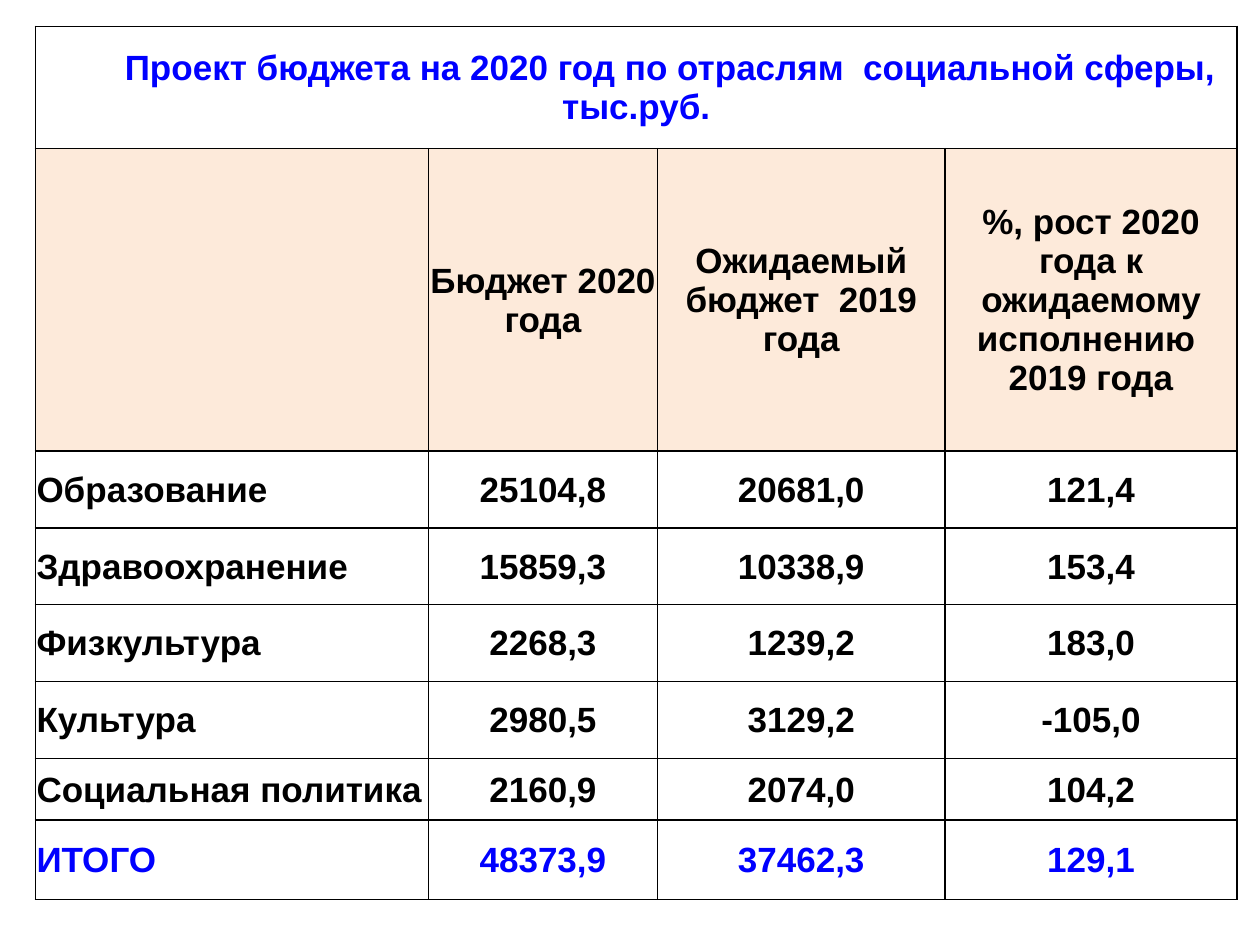
from dataclasses import dataclass

from lxml import etree
from pptx import Presentation
from pptx import util as u
from pptx.dml.color import RGBColor
from pptx.enum import text
from pptx.oxml import ns


@dataclass(frozen=True)
class Theme:
    font: str = "Arial"
    size: int = 20
    ink: str = "000000"
    accent: str = "0000FF"
    header: str = "FDEADA"
    border: str = "000000"
    border_width: int = 1
    title_indent: float = 0.54


THEME = Theme()
SLIDE_SIZE = (10, 7.5)
ORIGIN = (0.28, 0.21)
COLUMNS = [3.12, 1.82, 2.28, 2.32]
ROWS = [0.97, 2.4] + [0.61] * 4 + [0.49, 0.63]
TITLE = "Проект бюджета на 2020 год по отраслям  социальной сферы, тыс.руб."
HEADINGS = [
    "",
    "Бюджет 2020 года",
    "Ожидаемый бюджет  2019 года",
    "%, рост 2020 года к ожидаемому исполнению  2019 года",
]
SECTORS = [
    ["Образование", "25104,8", "20681,0", "121,4"],
    ["Здравоохранение", "15859,3", "10338,9", "153,4"],
    ["Физкультура", "2268,3", "1239,2", "183,0"],
    ["Культура", "2980,5", "3129,2", "-105,0"],
    ["Социальная политика", "2160,9", "2074,0", "104,2"],
]
TOTAL = ["ИТОГО", "48373,9", "37462,3", "129,1"]


def add_borders(cell):
    properties = cell._tc.get_or_add_tcPr()
    for position, side in enumerate(("lnL", "lnR", "lnT", "lnB")):
        line = etree.Element(ns.qn(f"a:{side}"), w=str(u.Pt(THEME.border_width)))
        fill = etree.SubElement(line, ns.qn("a:solidFill"))
        etree.SubElement(fill, ns.qn("a:srgbClr"), val=THEME.border)
        properties.insert(position, line)


def format_cell(cell, fill=None):
    layout = {
        "margin_left": u.Inches(0.01),
        "margin_right": u.Inches(0.01),
        "margin_top": u.Inches(0.01),
        "margin_bottom": 0,
        "vertical_anchor": text.MSO_ANCHOR.MIDDLE,
    }
    for name, value in layout.items():
        setattr(cell, name, value)
    if fill:
        cell.fill.solid()
        cell.fill.fore_color.rgb = RGBColor.from_string(fill)
    else:
        cell.fill.background()
    add_borders(cell)


def write(cell, words, color, align):
    paragraph = cell.text_frame.paragraphs[0]
    paragraph.alignment = align
    if words:
        run = paragraph.add_run()
        run.text = words
        for name, value in {"name": THEME.font, "size": u.Pt(THEME.size), "bold": True}.items():
            setattr(run.font, name, value)
        run.font.color.rgb = RGBColor.from_string(color)
    return paragraph


def write_title(budget):
    budget.cell(0, 0).merge(budget.cell(0, len(COLUMNS) - 1))
    for column in range(len(COLUMNS)):
        format_cell(budget.cell(0, column))
    title = write(budget.cell(0, 0), TITLE, THEME.accent, text.PP_ALIGN.CENTER)
    properties = title._p.get_or_add_pPr()
    properties.set("marL", "0")
    properties.set("indent", str(u.Inches(THEME.title_indent)))


def write_row(budget, row, entries, color=THEME.ink, fill=None):
    for column, words in enumerate(entries):
        cell = budget.cell(row, column)
        format_cell(cell, fill)
        write(cell, words, color, text.PP_ALIGN.CENTER if column else text.PP_ALIGN.LEFT)


def add_budget(slide):
    frame = [u.Inches(length) for length in (*ORIGIN, sum(COLUMNS), sum(ROWS))]
    budget = slide.shapes.add_table(len(ROWS), len(COLUMNS), *frame).table
    budget.first_row = budget.horz_banding = False
    for column, width in zip(budget.columns, COLUMNS):
        column.width = u.Inches(width)
    for row, height in zip(budget.rows, ROWS):
        row.height = u.Inches(height)
    return budget


def main():
    deck = Presentation()
    deck.slide_width, deck.slide_height = map(u.Inches, SLIDE_SIZE)
    budget = add_budget(deck.slides.add_slide(deck.slide_layouts[6]))
    write_title(budget)
    write_row(budget, 1, HEADINGS, fill=THEME.header)
    for row, sector in enumerate(SECTORS, start=2):
        write_row(budget, row, sector)
    write_row(budget, len(ROWS) - 1, TOTAL, color=THEME.accent)
    deck.save("out.pptx")


if __name__ == "__main__":
    main()
